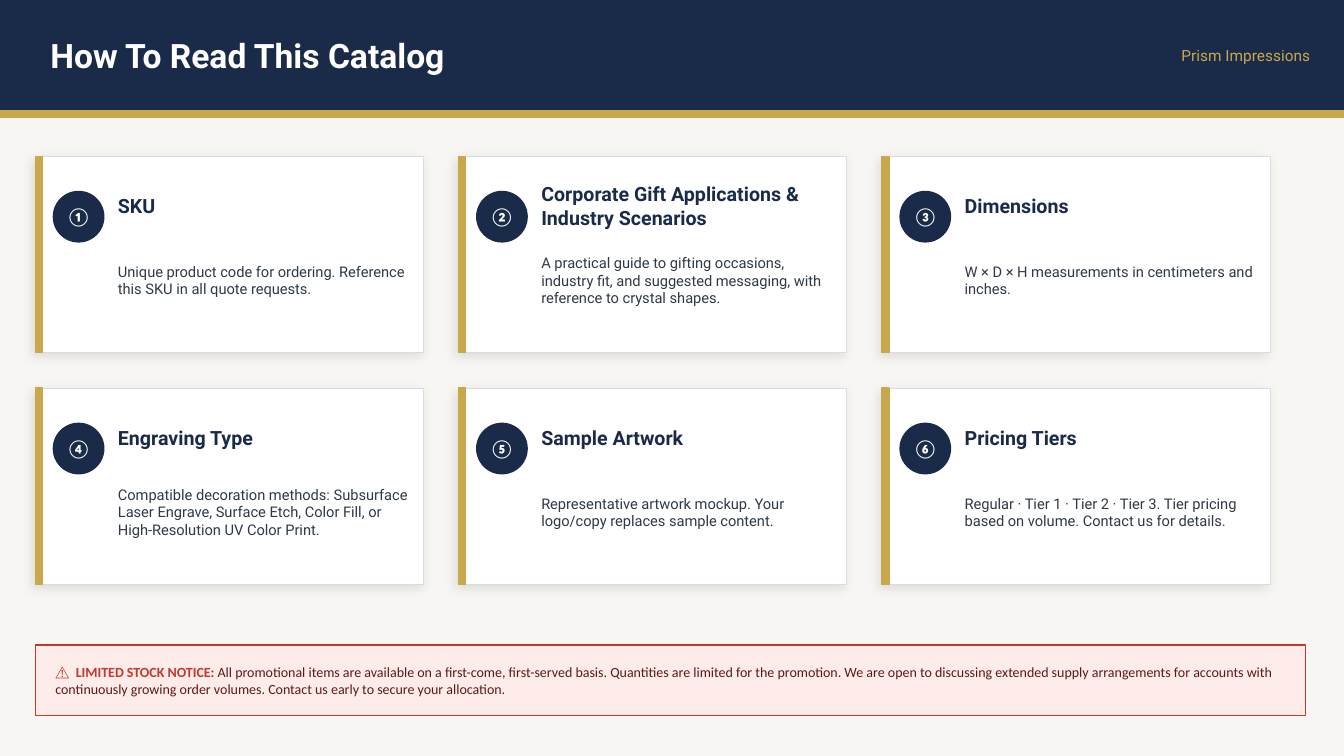
from lxml import etree
from pptx import Presentation
from pptx.dml.color import RGBColor
from pptx.enum import shapes, text
from pptx.oxml import ns
from pptx.util import Pt

NAVY, GOLD, WHITE, RED = "1A2B4A", "C9A84C", "FFFFFF", "C0392B"
RECT, OVAL = shapes.MSO_SHAPE.RECTANGLE, shapes.MSO_SHAPE.OVAL
LEFT, MID, RIGHT = text.PP_ALIGN.LEFT, text.PP_ALIGN.CENTER, text.PP_ALIGN.RIGHT

CARDS = [
    ("①", "SKU",
     "Unique product code for ordering. Reference this SKU in all quote requests."),
    ("②", "Corporate Gift Applications & Industry Scenarios",
     "A practical guide to gifting occasions, industry fit, and suggested "
     "messaging, with reference to crystal shapes."),
    ("③", "Dimensions", "W × D × H measurements in centimeters and inches."),
    ("④", "Engraving Type",
     "Compatible decoration methods: Subsurface Laser Engrave, Surface Etch, "
     "Color Fill, or High-Resolution UV Color Print."),
    ("⑤", "Sample Artwork",
     "Representative artwork mockup. Your logo/copy replaces sample content."),
    ("⑥", "Pricing Tiers",
     "Regular · Tier 1 · Tier 2 · Tier 3. Tier pricing based on volume. "
     "Contact us for details."),
]
NOTICE = (
    "All promotional items are available on a first-come, first-served basis. "
    "Quantities are limited for the promotion. We are open to discussing extended "
    "supply arrangements for accounts with continuously growing order volumes. "
    "Contact us early to secure your allocation."
)


def paint(target, color):
    """Set a solid colour on a fill."""
    target.solid()
    target.fore_color.rgb = RGBColor.from_string(color)


def block(slide, x, y, w, h, fill, line=None, width=1, kind=RECT):
    shape = slide.shapes.add_shape(kind, Pt(x), Pt(y), Pt(w), Pt(h))
    shape.shadow.inherit = False
    paint(shape.fill, fill)
    paint(shape.line.fill, line or fill)
    shape.line.width = Pt(width)
    return shape


def shade(shape):
    """Give a shape a soft outer shadow."""
    effects = shape._element.spPr.find(ns.qn("a:effectLst"))
    outer = etree.SubElement(effects, ns.qn("a:outerShdw"), blurRad=str(Pt(8)),
                             dist=str(Pt(3)), dir=str(135 * 60000),
                             algn="bl", rotWithShape="0")
    color = etree.SubElement(outer, ns.qn("a:srgbClr"), val="000000")
    etree.SubElement(color, ns.qn("a:alpha"), val="10000")


def write(slide, x, y, w, h, words, size, color, font="Roboto", bold=False,
          align=LEFT, box=None):
    """Put text in a new text box, or in the given placeholder."""
    box = box or slide.shapes.add_textbox(0, 0, 0, 0)
    box.left, box.top, box.width, box.height = Pt(x), Pt(y), Pt(w), Pt(h)
    frame = box.text_frame
    frame.word_wrap = True
    frame.auto_size = text.MSO_AUTO_SIZE.NONE
    frame.vertical_anchor = text.MSO_ANCHOR.MIDDLE
    frame.margin_left = frame.margin_right = 0
    frame.margin_top = frame.margin_bottom = 0
    para = frame.paragraphs[0]
    para.alignment = align
    add_run(para, words, size, color, font, bold)
    return para


def add_run(para, words, size, color, font, bold=False):
    run = para.add_run()
    run.text = words
    run.font.size, run.font.name, run.font.bold = Pt(size), font, bold
    paint(run.font.fill, color)


def header(slide, w, h):
    block(slide, 0, 0, w, h, NAVY)
    block(slide, 0, h, w, 4.32, GOLD)
    title = slide.shapes.title
    slide.shapes._spTree.append(title._element)  # bring in front of the band
    write(slide, 36, 0, 720, h, "How To Read This Catalog", 24, WHITE,
          bold=True, box=title)
    write(slide, w - 204, 0, 180, h, "Prism Impressions", 11, GOLD, align=RIGHT)


def card(slide, x, y, w, h, mark, head, body):
    shade(block(slide, x, y, w, h, WHITE, "D8DCE4", 0.75))
    block(slide, x, y, 5.04, h, GOLD)
    # Numbered badge
    badge = (x + 12.96, y + 25.2, 36, 36)
    block(slide, *badge, NAVY, kind=OVAL)
    write(slide, *badge, mark, 13, WHITE, "Calibri", True, MID)
    # Heading and description
    left, wide = x + 59.04, w - 68.4
    write(slide, left, y + 21.6, wide, 27.36, head, 14, NAVY, bold=True)
    write(slide, left, y + 48.96, wide, 79.2, body, 10.5, "2E3A48")


def notice(slide, x, y, w, h):
    block(slide, x, y, w, h, "FDECEA", RED)
    para = write(slide, x + 14.4, y, w - 21.6, h, "⚠\tLIMITED STOCK NOTICE: ",
                 10, RED, "Calibri", True)
    # Tab stop after the warning sign
    tabs = etree.SubElement(para._p.get_or_add_pPr(), ns.qn("a:tabLst"))
    etree.SubElement(tabs, ns.qn("a:tab"), pos=str(Pt(14.6)), algn="l")
    add_run(para, NOTICE, 10, "5C1A15", "Calibri")


def main():
    deck = Presentation()
    deck.slide_width, deck.slide_height = Pt(960), Pt(540)
    slide = deck.slides.add_slide(deck.slide_layouts[5])
    paint(slide.background.fill, "F8F6F2")
    header(slide, 960, 79.2)
    # Grid of three columns and two rows
    wide, high, gap = 277.2, 140.4, 25.2
    for i, parts in enumerate(CARDS):
        row, col = divmod(i, 3)
        card(slide, gap + col * (wide + gap), 111.6 + row * (high + gap),
             wide, high, *parts)
    notice(slide, gap, 460.8, 907.2, 50.4)
    deck.save("out.pptx")


if __name__ == "__main__":
    main()
